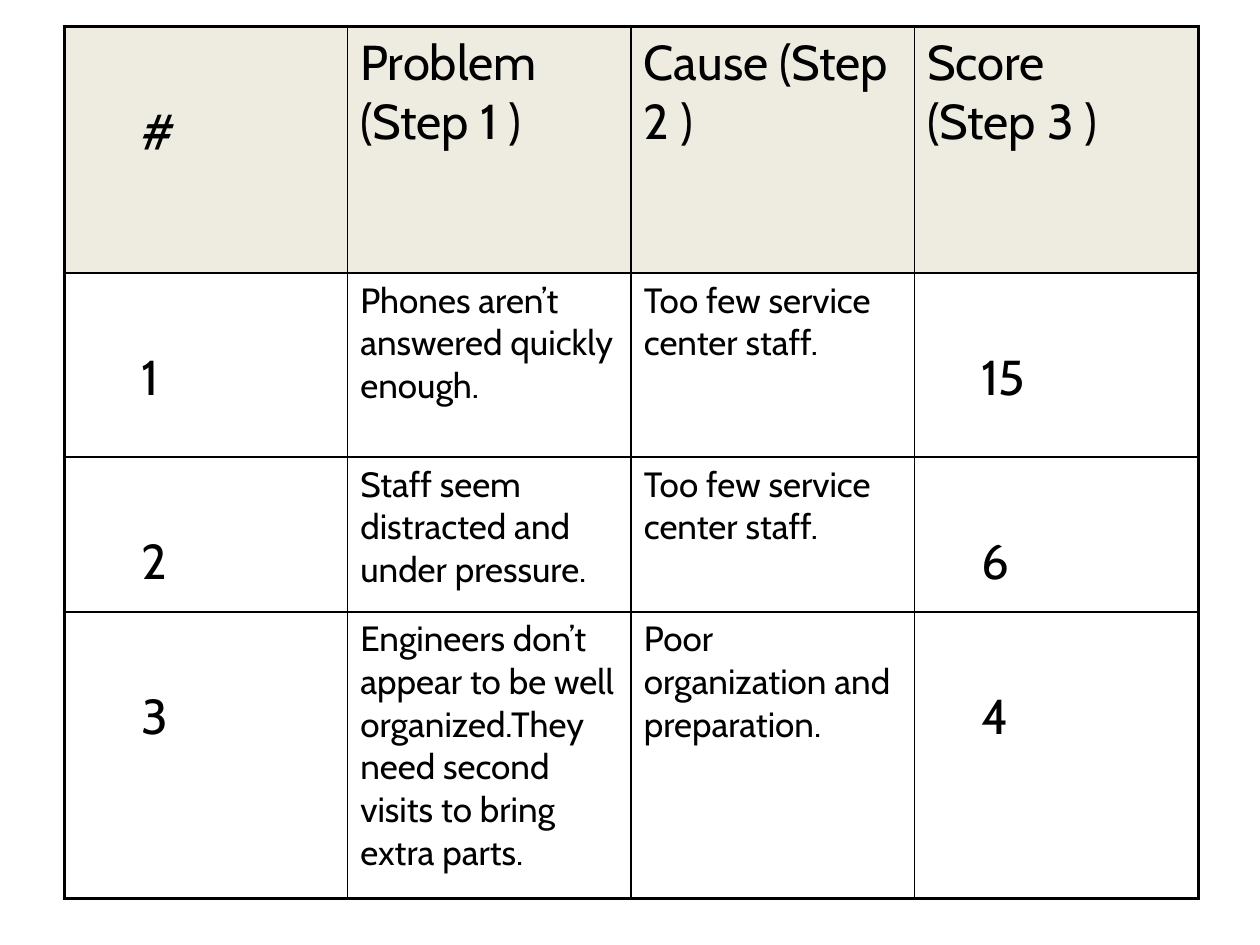
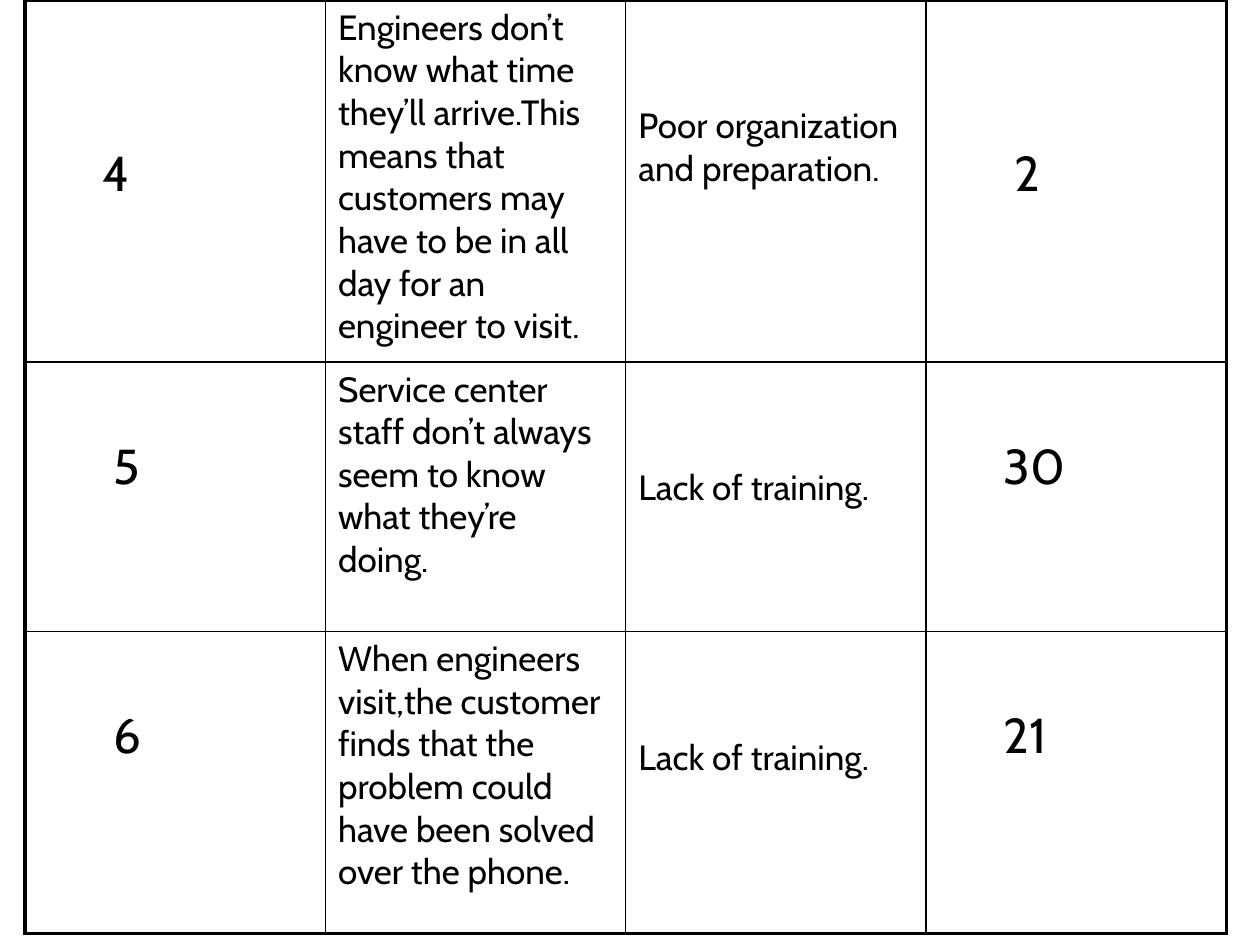
"""Build two slides that tabulate service problems, their causes and scores."""
from pptx import Presentation
from pptx.dml.color import RGBColor
from pptx.oxml import parse_xml
from pptx.oxml.ns import nsdecls
from pptx.util import Pt

FONT, INK, HEADER_FILL = "Cabin", "000000", "EEECE1"
LARGE, SMALL = 28, 20
SIDE, TOP = 7.2, 3.6
LINE_STEP = 1.41
INDENT_STEP = 6.2
OUTER, INNER = 2.25, 1


def figure(words, indent, drop=1):
    """Describe a large entry, indented by steps and dropped by lines."""
    return {"words": words, "size": LARGE, "indent": indent, "drop": drop}


def heading(words, right=SIDE):
    """Describe a column heading."""
    return {"words": words, "size": LARGE, "right": right}


def prose(words, drop=0):
    """Describe a sentence in the smaller size."""
    return {"words": words, "size": SMALL, "drop": drop}


SLIDES = [
    {
        "left": 36.72, "top": 15.12, "column": 162,
        "heights": [141, 105, 88.5, 164], "header": True,
        "rows": [
            [figure("#", 6), heading("Problem (Step 1 )"),
             heading("Cause (Step 2 )"), heading("Score (Step 3 )", 40)],
            [figure("1", 6), prose("Phones aren’t answered quickly enough."),
             prose("Too few service center staff."), figure("15", 5)],
            [figure("2", 6), prose("Staff seem distracted and under pressure."),
             prose("Too few service center staff."), figure("6", 5)],
            [figure("3", 6),
             prose("Engineers don’t appear to be well organized.They need "
                   "second visits to bring extra parts."),
             prose("Poor organization and preparation."), figure("4", 5)],
        ],
    },
    {
        "left": 14.4, "top": 0, "column": 171.6,
        "heights": [206.8, 154, 172.8], "header": False,
        "rows": [
            [figure("4", 6, 2),
             prose("Engineers don’t know what time they’ll arrive.This means "
                   "that customers may have to be in all day for an engineer "
                   "to visit."),
             prose("Poor organization and preparation.", 2), figure("2", 7, 2)],
            [figure("5", 7),
             prose("Service center staff don’t always seem to know what "
                   "they’re doing."),
             prose("Lack of training.", 2), figure("30", 6)],
            [figure("6", 7),
             prose("When engineers visit,the customer finds that the problem "
                   "could have been solved over the phone."),
             prose("Lack of training.", 2), figure("21", 6)],
        ],
    },
]


def color(value):
    """Turn a hex string into a colour."""
    return RGBColor.from_string(value)


def add_borders(cell, outer_sides):
    """Draw the four borders, heavier where they bound the table."""
    properties = cell._tc.get_or_add_tcPr()
    for side in "LRTB":
        width = Pt(OUTER if side in outer_sides else INNER)
        properties.append(parse_xml(
            f'<a:ln{side} {nsdecls("a")} w="{width}"><a:solidFill>'
            f'<a:srgbClr val="{INK}"/></a:solidFill></a:ln{side}>'))


def fill_cell(cell, entry):
    """Place and format the words of one entry."""
    size = entry["size"]
    cell.margin_left = Pt(SIDE + INDENT_STEP * entry.get("indent", 0))
    cell.margin_right = Pt(entry.get("right", SIDE))
    cell.margin_top = Pt(TOP + LINE_STEP * size * entry.get("drop", 0))
    cell.margin_bottom = Pt(TOP)
    cell.text_frame.text = entry["words"]
    font = cell.text_frame.paragraphs[0].runs[0].font
    font.name, font.size = FONT, Pt(size)
    font.color.rgb = color(INK)


def add_problem_table(slide, content):
    """Add the table of problems described by content."""
    rows, heights, column = content["rows"], content["heights"], content["column"]
    last_row, last_column = len(rows) - 1, len(rows[0]) - 1
    problems = slide.shapes.add_table(
        len(rows), len(rows[0]), Pt(content["left"]), Pt(content["top"]),
        Pt(column * len(rows[0])), Pt(sum(heights))).table
    problems.first_row = problems.horz_banding = False
    for table_column in problems.columns:
        table_column.width = Pt(column)
    for r, (entries, height) in enumerate(zip(rows, heights)):
        problems.rows[r].height = Pt(height)
        for c, entry in enumerate(entries):
            cell = problems.cell(r, c)
            edges = {"L": c == 0, "R": c == last_column,
                     "T": r == 0, "B": r == last_row}
            add_borders(cell, [side for side, outer in edges.items() if outer])
            if r == 0 and content["header"]:
                cell.fill.solid()
                cell.fill.fore_color.rgb = color(HEADER_FILL)
            else:
                cell.fill.background()
            fill_cell(cell, entry)


def main():
    """Build and save the presentation."""
    deck = Presentation()
    deck.slide_width, deck.slide_height = Pt(720), Pt(540)
    for content in SLIDES:
        add_problem_table(deck.slides.add_slide(deck.slide_layouts[6]), content)
    deck.save("out.pptx")


if __name__ == "__main__":
    main()
